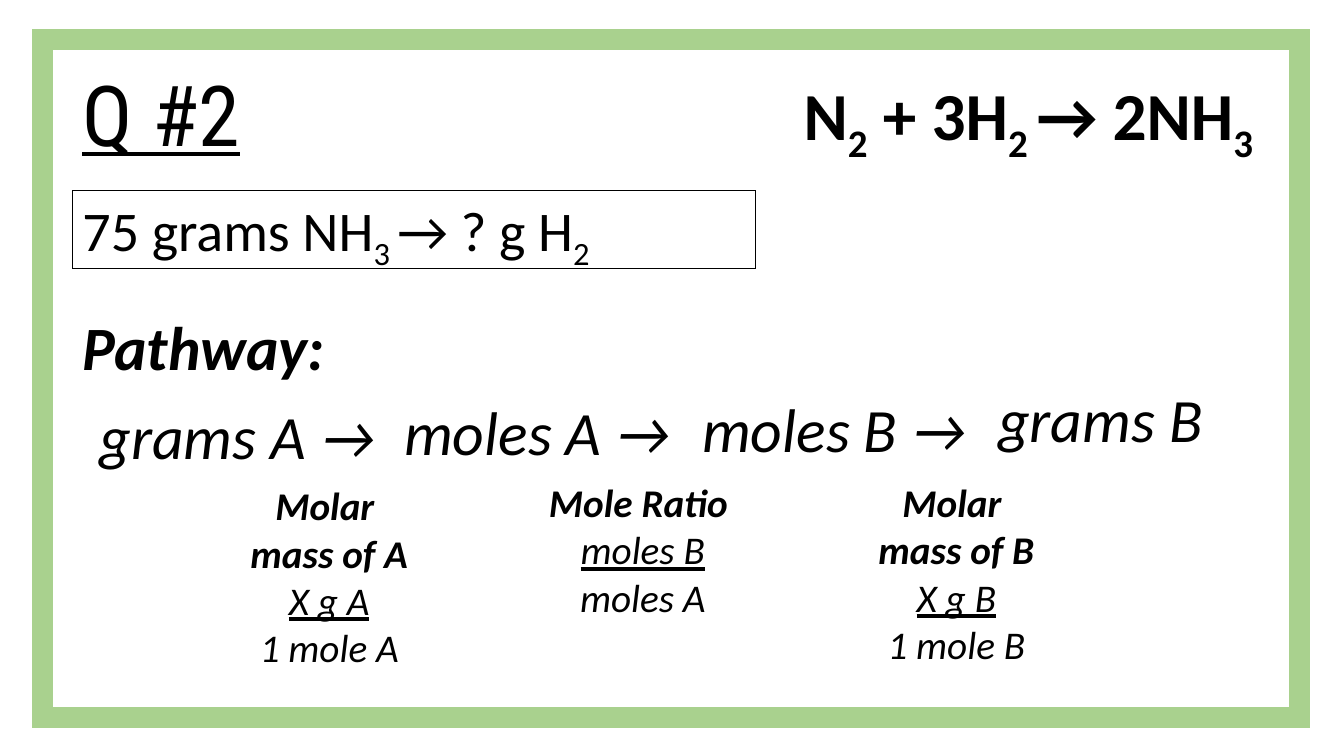
from dataclasses import dataclass

import pptx
import pptx.dml.color
import pptx.enum.shapes
import pptx.enum.text
import pptx.oxml.ns
import pptx.util
from lxml import etree

Inches = pptx.util.Inches
Pt = pptx.util.Pt
ALIGN = pptx.enum.text.PP_ALIGN
ANCHOR = pptx.enum.text.MSO_ANCHOR
BLACK, WHITE, GREEN = "000000", "FFFFFF", "A9D18E"


@dataclass
class Run:
    text: str
    sub: bool = False
    underline: bool = False
    bold: bool = False


@dataclass
class Block:
    left: float
    top: float
    width: float
    height: float
    size: int
    paras: list[list[Run]]
    font: str = "Calibri"
    italic: bool = False
    center: bool = True
    wrap: bool = True
    grow: bool = True
    spacing: float | None = None


def rgb(color: str) -> pptx.dml.color.RGBColor:
    return pptx.dml.color.RGBColor.from_string(color)


def formula(text: str, bold: bool = False) -> list[Run]:
    """Split on underscores: every second piece is a subscript."""
    return [Run(t, sub=i % 2 == 1, bold=bold)
            for i, t in enumerate(text.split("_"))]


def add_rect(slide, left: float, top: float, width: float, height: float,
             fill: str | None, line: str | None, weight: float = 0.75):
    sp = slide.shapes.add_shape(
        pptx.enum.shapes.MSO_SHAPE.RECTANGLE,
        Inches(left), Inches(top), Inches(width), Inches(height))
    sp.shadow.inherit = False
    if fill:
        sp.fill.solid()
        sp.fill.fore_color.rgb = rgb(fill)
    else:
        sp.fill.background()
    if line:
        sp.line.color.rgb = rgb(line)
        sp.line.width = Pt(weight)
        etree.SubElement(sp.line._get_or_add_ln(),
                         pptx.oxml.ns.qn("a:miter"), lim="800000")
    else:
        sp.line.fill.background()
    return sp


def write_text(sp, block: Block, anchor=ANCHOR.TOP) -> None:
    tf = sp.text_frame
    tf.word_wrap = block.wrap
    tf.vertical_anchor = anchor
    if block.grow:
        tf.auto_size = pptx.enum.text.MSO_AUTO_SIZE.SHAPE_TO_FIT_TEXT
    for i, runs in enumerate(block.paras):
        p = tf.add_paragraph() if i else tf.paragraphs[0]
        p.alignment = ALIGN.CENTER if block.center else ALIGN.LEFT
        if block.spacing:
            p.line_spacing = block.spacing
        p.font.name = block.font
        p.font.size = Pt(block.size)
        p.font.italic = block.italic
        p.font.color.rgb = rgb(BLACK)
        p.font.bold = all(run.bold for run in runs)
        p.font.underline = all(run.underline for run in runs)
        for run in runs:
            for j, line in enumerate(run.text.split("\n")):
                if j:
                    p.add_line_break()
                r = p.add_run()
                r.text = line
                if run.sub:
                    r.font._element.set("baseline", "-25000")


def add_text(slide, block: Block) -> None:
    sp = slide.shapes.add_textbox(Inches(block.left), Inches(block.top),
                                  Inches(block.width), Inches(block.height))
    write_text(sp, block)


def add_text_rect(slide, block: Block, fill: str | None, line: str | None,
                  anchor=ANCHOR.TOP) -> None:
    sp = add_rect(slide, block.left, block.top, block.width, block.height,
                  fill, line)
    write_text(sp, block, anchor)


def step(left: float, top: float, width: float, text: str) -> Block:
    return Block(left, top, width, 0.84, 44, [[Run(text)]],
                 italic=True, wrap=False)


def molar_mass(left: float, top: float, name: str) -> Block:
    return Block(left, top, 2.55, 1.99, 28, [
        [Run(f"Molar \nmass of {name}", bold=True)],
        [Run(f"X g {name}", underline=True)],
        [Run(f"1 mole {name}")]], italic=True)


def main() -> None:
    prs = pptx.Presentation()
    prs.slide_width, prs.slide_height = Inches(13.33), Inches(7.5)
    slide = prs.slides.add_slide(prs.slide_layouts[6])

    # Frame
    add_rect(slide, 0.42, 0.39, 12.47, 6.73, WHITE, GREEN, 15)

    # Heading and reaction
    add_text(slide, Block(0.72, 0.68, 11.86, 1.96, 60,
                          [[Run("Q #2", underline=True)]],
                          font="Roboto Condensed", center=False, grow=False,
                          spacing=0.9))
    add_text(slide, Block(6.14, 0.68, 8.12, 0.91, 48,
                          [formula("N_2_ + 3H_2 _→ 2NH_3", bold=True)]))

    # Question and pathway label
    add_text_rect(slide, Block(0.72, 1.89, 6.77, 0.77, 40,
                               [formula("75 grams NH_3 _→ ? g H_2")],
                               center=False), None, BLACK)
    add_text_rect(slide, Block(0.72, 2.75, 11.13, 1.36, 44,
                               [[Run("Pathway:", bold=True)]], italic=True,
                               center=False, grow=False),
                  WHITE, None, ANCHOR.MIDDLE)

    # Pathway steps and conversion factors
    mole_ratio = Block(5.33, 4.7, 2.09, 1.51, 28, [
        [Run("Mole Ratio ", bold=True)],
        [Run("moles B", underline=True)],
        [Run("moles A")]], italic=True, wrap=False)
    for block in (step(0.85, 3.9, 3.02, "grams A →"),
                  step(3.87, 3.86, 2.93, "moles A →"),
                  step(6.79, 3.83, 2.98, "moles B →"),
                  molar_mass(1.99, 4.73, "A"),
                  mole_ratio,
                  step(9.79, 3.73, 2.39, "grams B "),
                  molar_mass(8.21, 4.7, "B")):
        add_text(slide, block)

    prs.save("out.pptx")


if __name__ == "__main__":
    main()
